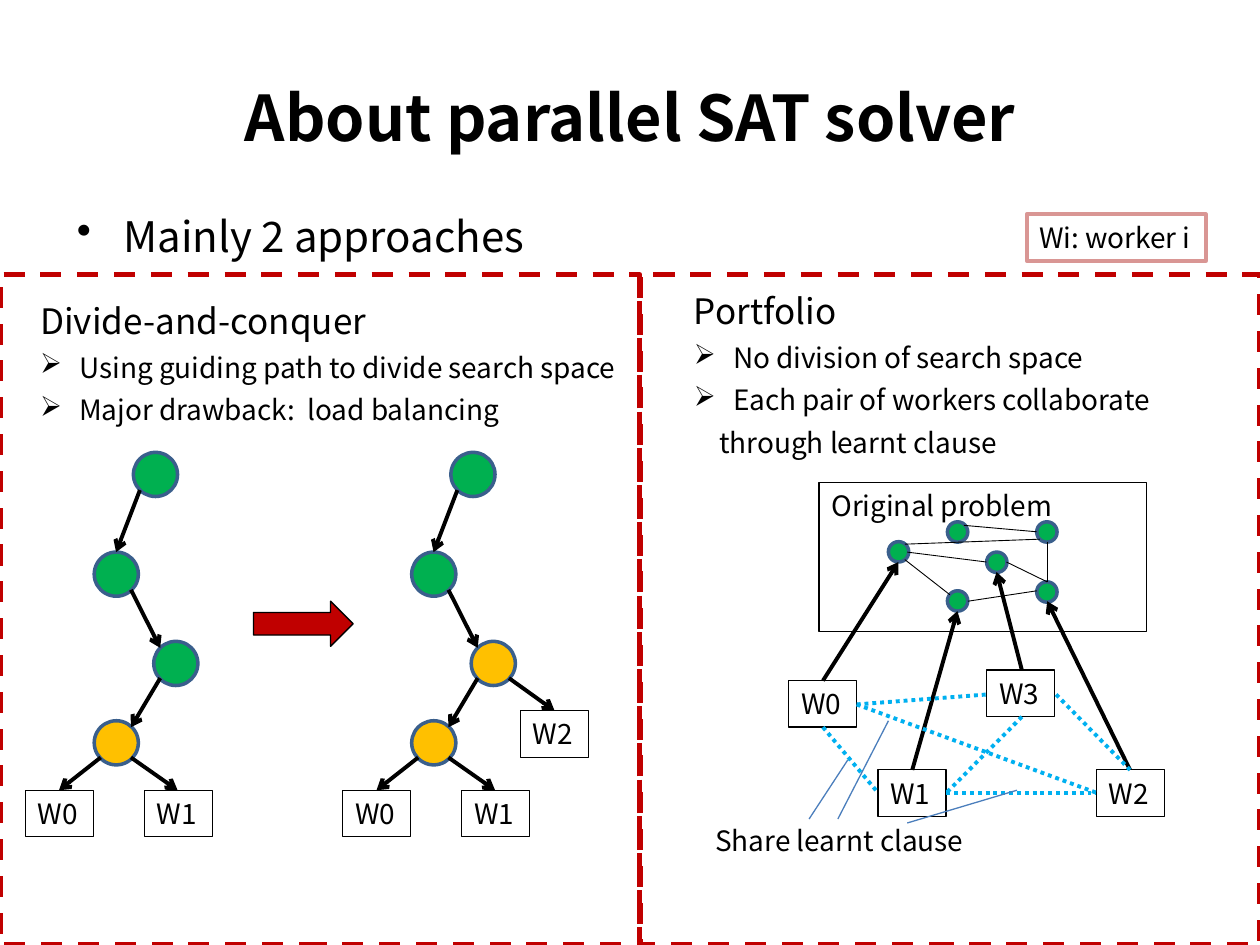
from pptx import Presentation
from pptx.dml.color import RGBColor
from pptx.enum import dml, shapes, text
from pptx.oxml.ns import qn
from pptx.util import Cm, Pt
from lxml import etree

FONT = "Noto Sans CJK KR"
BLACK = RGBColor(0x00, 0x00, 0x00)
GREEN = RGBColor(0x00, 0xB0, 0x50)
AMBER = RGBColor(0xFF, 0xC0, 0x00)
NODE_EDGE = RGBColor(0x3A, 0x5F, 0x8C)
RED = RGBColor(0xC0, 0x00, 0x00)
PINK = RGBColor(0xD9, 0x96, 0x94)
SKY = RGBColor(0x00, 0xB0, 0xF0)
BLUE = RGBColor(0x4B, 0x7E, 0xBC)

deck = Presentation()
deck.slide_width, deck.slide_height = Cm(25.4), Cm(19.05)
slide = deck.slides.add_slide(deck.slide_layouts[5])


def write(paragraph, words, size=16, bold=False, align=text.PP_ALIGN.LEFT,
          before=0, margin=0, indent=0, bullet=None):
    run = paragraph.add_run()
    run.text = words
    run.font.name, run.font.size, run.font.bold = FONT, Pt(size), bold
    run.font.color.rgb = BLACK
    paragraph.alignment, paragraph.space_before = align, Pt(before)
    properties = paragraph._p.get_or_add_pPr()
    properties.set("marL", str(Cm(margin)))
    properties.set("indent", str(Cm(indent)))
    if bullet:
        etree.SubElement(properties, qn("a:buChar")).set("char", bullet)


def connect(start, end, color=BLACK, width=2.25, dash=None, arrow=False):
    link = slide.shapes.add_connector(
        shapes.MSO_CONNECTOR.STRAIGHT, *[Cm(v) for v in (*start, *end)])
    link.line.color.rgb, link.line.width = color, Pt(width)
    if dash:
        link.line.dash_style = dash
    if arrow:
        etree.SubElement(link.line._get_or_add_ln(), qn("a:tailEnd")).set("type", "arrow")
    etree.SubElement(link._element.spPr, qn("a:effectLst"))


# Title
title = slide.shapes.title
title.left, title.top, title.width, title.height = Cm(1.27), Cm(0.76), Cm(22.86), Cm(3.18)
title.text_frame.vertical_anchor = text.MSO_ANCHOR.MIDDLE
title.text_frame.auto_size = text.MSO_AUTO_SIZE.NONE
write(title.text_frame.paragraphs[0], "About parallel SAT solver", size=36, bold=True,
      align=text.PP_ALIGN.CENTER)

# Text blocks: position, then the paragraphs with their format
hanging = dict(before=5, margin=2.06, indent=-0.79)
heading = dict(hanging, size=20)
point = dict(hanging, bullet="➢")
blocks = [
    ((1.3, 4.11, 22.86, 12.57), [
        ("Mainly 2 approaches", dict(size=24, before=6, margin=0.94, indent=-0.94, bullet="•"))]),
    ((-0.71, 5.92, 13.56, 3.61), [
        ("Divide-and-conquer", heading),
        ("Using guiding path to divide search space", point),
        ("Major drawback:  load balancing", point)]),
    ((12.47, 5.72, 11.15, 3.71), [
        ("Portfolio", heading),
        ("No division of search space", point),
        ("Each pair of workers collaborate", point),
        ("through learnt clause", dict(before=5, margin=1.78))]),
    ((12.9, 16.48, 7.39, 0.94), [("Share learnt clause", hanging)]),
]
for place, lines in blocks:
    block = slide.shapes.add_textbox(*[Cm(v) for v in place]).text_frame
    block.word_wrap = True
    for i, (words, style) in enumerate(lines):
        write(block.add_paragraph() if i else block.paragraphs[0], words, **style)

# Nodes and edges of the two search trees, the second one shifted right
TREE_SHIFT = 6.4
tree_nodes = [(2.69, 9.12), (1.9, 11.13), (3.1, 12.93), (1.9, 14.53)]
tree_edges = [
    ((2.82, 9.88), (2.34, 11.13)), ((2.64, 11.89), (3.23, 13.06)),
    ((3.23, 13.67), (2.64, 14.66)), ((2.03, 15.27), (1.19, 15.93)),
    ((2.64, 15.27), (3.58, 15.93)),
]
tree_colors = [(GREEN, GREEN, GREEN, AMBER), (GREEN, GREEN, AMBER, AMBER)]
circles, arrows = [], [((10.26, 13.67), (11.18, 14.33))]
workers = [("W2", 10.49, 14.33)]
for tree, colors in enumerate(tree_colors):
    shift = tree * TREE_SHIFT
    circles += [(x + shift, y, 0.89, color) for (x, y), color in zip(tree_nodes, colors)]
    arrows += [((x1 + shift, y1), (x2 + shift, y2)) for (x1, y1), (x2, y2) in tree_edges]
    workers += [("W0", 0.51 + shift, 15.93), ("W1", 2.91 + shift, 15.93)]

# Variables, workers and arrows of the portfolio
variables = [(17.91, 10.92), (19.89, 11.13), (20.9, 10.52),
             (19.1, 10.52), (19.1, 11.91), (20.9, 11.73)]
circles += [(x, y, 0.41, GREEN) for x, y in variables]
workers += [("W0", 15.9, 13.72), ("W1", 17.7, 15.52),
            ("W2", 22.1, 15.52), ("W3", 19.89, 13.51)]
arrows += [
    ((16.59, 13.72), (18.11, 11.33)), ((18.39, 15.52), (19.3, 12.32)),
    ((20.6, 13.51), (20.09, 11.53)), ((22.78, 15.52), (21.11, 12.12)),
]

for x, y, size, color in circles:
    node = slide.shapes.add_shape(shapes.MSO_SHAPE.OVAL, Cm(x), Cm(y), Cm(size), Cm(size))
    node.shadow.inherit = False
    node.fill.solid()
    node.fill.fore_color.rgb = color
    node.line.color.rgb, node.line.width = NODE_EDGE, Pt(2)

# Step from the first tree to the second
step = slide.shapes.add_shape(shapes.MSO_SHAPE.RIGHT_ARROW,
                              Cm(5.11), Cm(12.12), Cm(2.01), Cm(0.91))
step.shadow.inherit = False
step.fill.solid()
step.fill.fore_color.rgb = RED
step.line.color.rgb, step.line.width = BLACK, Pt(0.75)

# Outlined boxes: workers, problem, legend and the two dashed panels
boxes = [(name, (x, y, 1.37, 0.94), BLACK, 0.75) for name, x, y in workers]
boxes += [
    ("Original problem", (16.51, 9.73, 6.6, 3), BLACK, 0.75),
    ("Wi: worker i", (20.7, 4.32, 3.61, 0.94), PINK, 2.25),
    ("", (12.9, 5.54, 12.5, 13.51), RED, 3),
    ("", (0, 5.54, 12.9, 13.51), RED, 3),
]
for words, place, color, width in boxes:
    box = slide.shapes.add_shape(shapes.MSO_SHAPE.RECTANGLE, *[Cm(v) for v in place])
    box.shadow.inherit = False
    box.fill.background()
    box.line.color.rgb, box.line.width = color, Pt(width)
    if words:
        box.text_frame.word_wrap = False
        box.text_frame.vertical_anchor = text.MSO_ANCHOR.TOP
        write(box.text_frame.paragraphs[0], words)
    else:
        box.line.dash_style = dml.MSO_LINE.DASH

# Lines between variables, between workers, and from the shared-clause label
variable_links = [
    ((18.29, 11.13), (19.89, 11.33)), ((18.24, 11.28), (19.15, 11.99)),
    ((19.43, 10.59), (20.9, 10.72)), ((18.24, 10.97), (20.96, 10.87)),
    ((19.51, 12.12), (20.9, 11.91)), ((20.29, 11.33), (21.11, 11.73)),
    ((21.11, 10.92), (21.11, 11.73)),
]
shared_clauses = [
    ((16.59, 14.66), (17.7, 15.98)), ((17.27, 14.2), (19.89, 14)),
    ((20.6, 14.45), (19.08, 15.98)), ((21.29, 14), (22.78, 15.52)),
    ((19.08, 15.98), (22.1, 15.98)), ((17.27, 14.2), (22.1, 15.98)),
]
label_pointers = [((17.09, 15.32), (16.31, 16.51)), ((20.5, 15.93), (18.29, 16.59)),
                  ((17.91, 14.53), (16.89, 16.51))]
for links, style in [
    (arrows, dict(arrow=True)),
    (variable_links, dict(width=0.5)),
    (shared_clauses, dict(color=SKY, dash=dml.MSO_LINE.ROUND_DOT)),
    (label_pointers, dict(color=BLUE, width=0.75)),
]:
    for start, end in links:
        connect(start, end, **style)

deck.save("out.pptx")
